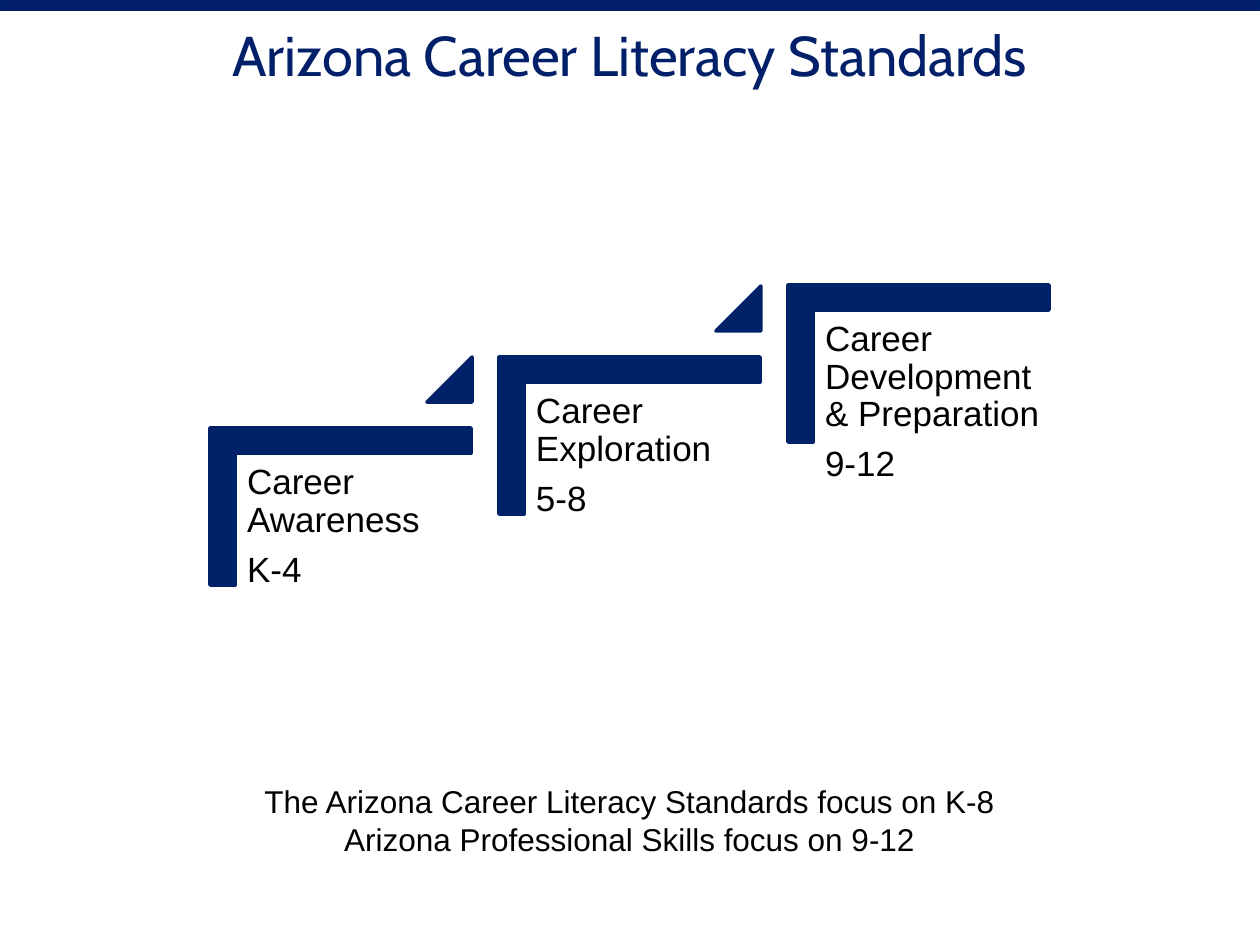
from pptx import Presentation
from pptx.dml.color import RGBColor
from pptx.enum.shapes import MSO_SHAPE as Shape
from pptx.enum.text import PP_ALIGN as Align
from pptx.util import Pt

PX = 914400 // 126
NAVY = "012169"


def color(value):
    return RGBColor.from_string(value)


def box(container, kind, left, top, width, height, line=2, fill=NAVY):
    shape = container.add_shape(kind, left * PX, top * PX, width * PX, height * PX)
    shape.shadow.inherit = False
    shape.fill.solid()
    shape.fill.fore_color.rgb = color(fill)
    shape.line.color.rgb = color(NAVY)
    shape.line.width = Pt(line)
    return shape


def text(container, left, top, width, height, lines, size, inset, align=Align.LEFT,
         font="Arial", ink="000000", spacing=1.0, after=0):
    textbox = container.add_textbox(left * PX, top * PX, width * PX, height * PX)
    frame = textbox.text_frame
    frame.word_wrap = True
    frame.margin_left = frame.margin_right = inset[0] * PX
    frame.margin_top = frame.margin_bottom = inset[1] * PX
    frame.text = "\n".join(lines)
    for paragraph in frame.paragraphs:
        paragraph.alignment = align
        paragraph.line_spacing = spacing
        paragraph.space_after = Pt(after)
        paragraph.font.size = Pt(size)
        paragraph.font.name = font
        paragraph.font.color.rgb = color(ink)


presentation = Presentation()
presentation.slide_width = 1260 * PX
presentation.slide_height = 945 * PX
slide = presentation.slides.add_slide(presentation.slide_layouts[6])
shapes = slide.shapes

box(shapes, Shape.RECTANGLE, 0, 0, 1260, 10, line=0.75, fill="012069")
text(shapes, 142, 21, 976, 68, ["Arizona Career Literacy Standards"], 32, (0, 0),
     Align.CENTER, "Cabin", "012069")

stages = [
    ("Career Awareness", "K-4"),
    ("Career Exploration", "5-8"),
    ("Career Development & Preparation", "9-12"),
]
steps = shapes.add_group_shape().shapes
for index, stage in enumerate(stages):
    left = 237 + 289 * index
    top = 376 - 143 * index // 2
    corner = box(steps, Shape.CORNER, left + 25, top, 157, 261)
    corner.rotation = 90
    corner.adjustments[0] = corner.adjustments[1] = 0.16
    text(steps, left, top + 78, 236, 207, stage, 20, (10, 10), spacing=0.9, after=7)
    if index < len(stages) - 1:
        triangle = box(steps, Shape.ISOSCELES_TRIANGLE, left + 190, top - 19, 45, 45)
        triangle.adjustments[0] = 1

text(shapes, 77, 776, 1105, 89, [
    "The Arizona Career Literacy Standards focus on K-8",
    "Arizona Professional Skills focus on 9-12",
], 18, (13, 6), Align.CENTER)

presentation.save("out.pptx")
